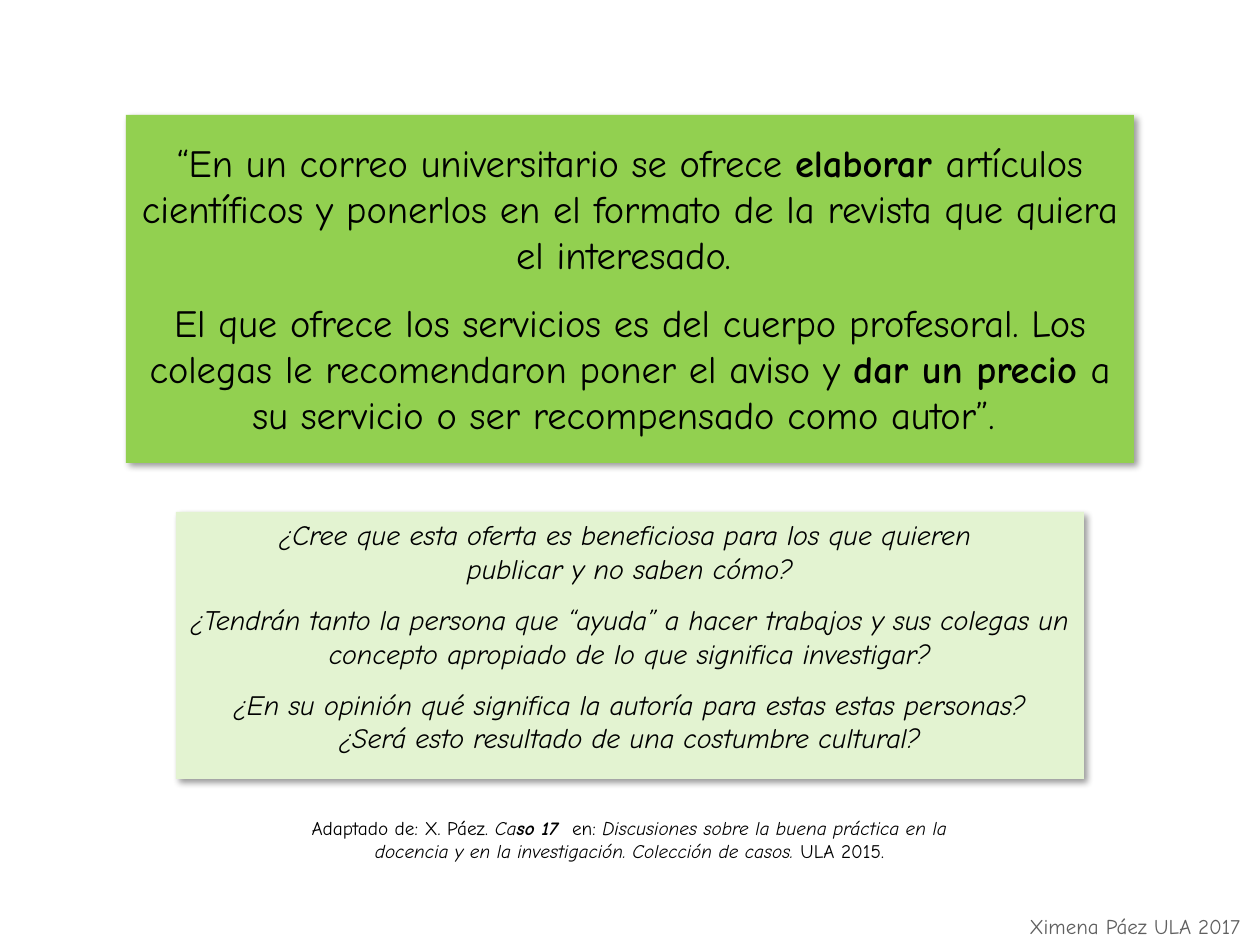
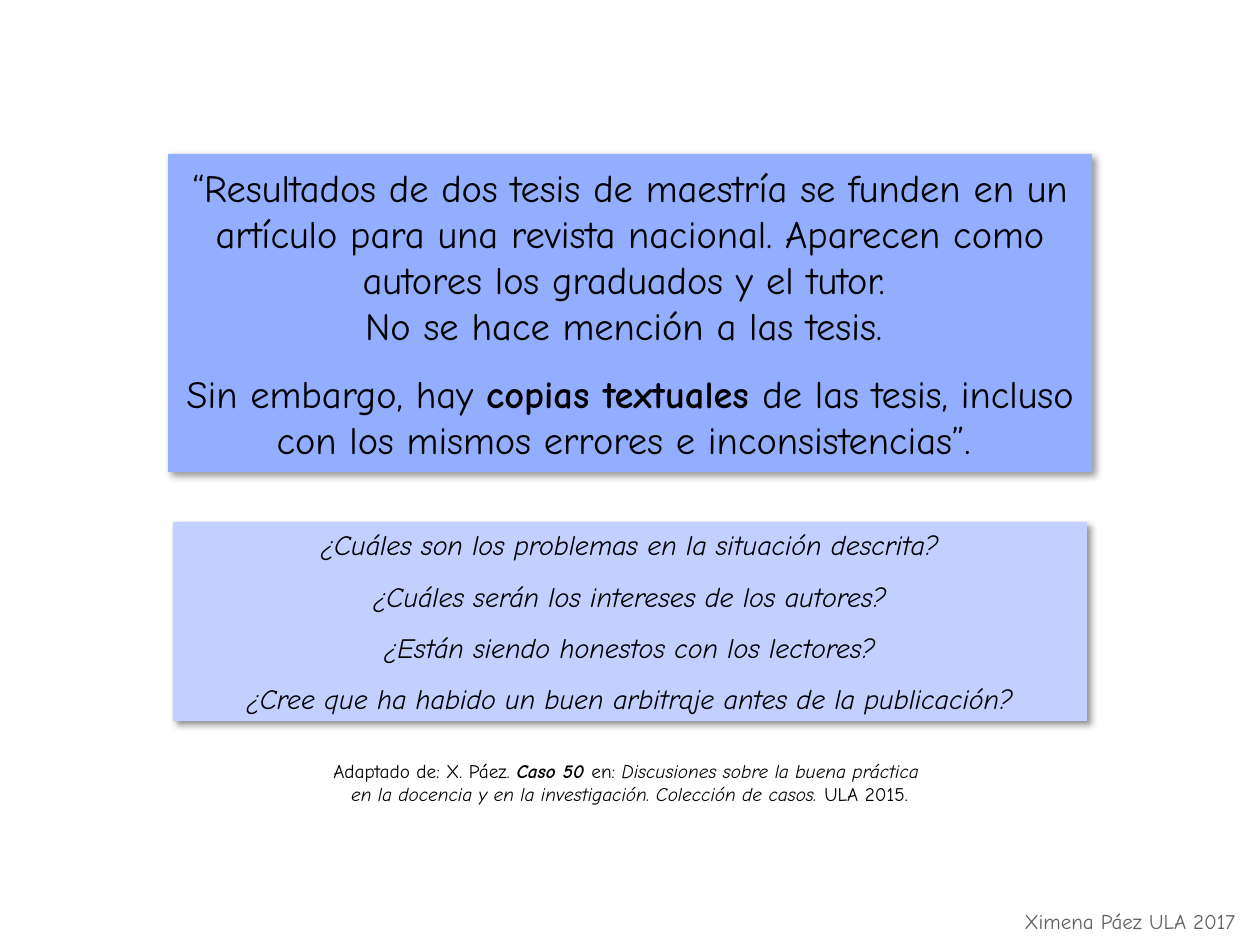
from lxml.etree import SubElement as Sub
from pptx import Presentation
from pptx.dml.color import RGBColor as RGB
from pptx.enum.shapes import MSO_SHAPE as Shape
from pptx.enum.text import MSO_ANCHOR as Anchor, MSO_AUTO_SIZE as Fit, PP_ALIGN as Align
from pptx.oxml.ns import qn
from pptx.util import Emu, Pt

SCALE = 914400 / 126
FONT = "Comic Neue"
INK = {
    "text": "000000", "foot": "5F5F5F",
    "green": "92D050", "pale green": "E3F3D1",
    "blue": "93ADFF", "pale blue": "C1D0FF",
}
CASE, ASK, NOTE, FOOT = 22, 16, 11, 12  # text sizes in points


def px(*nums):
    return [Emu(round(n * SCALE)) for n in nums]


def tint(name):
    return RGB.from_string(INK[name])


class Deck:
    def __init__(self):
        self.prs = Presentation()
        self.prs.slide_width, self.prs.slide_height = px(1260, 945)
        self.slide = None

    def page(self):
        self.slide = self.prs.slides.add_slide(self.prs.slide_layouts[6])

    def put(self, shape, paras, size, color="text", italic=None):
        """Fill a shape with (gap in points, runs); a run is text or (text, marks)."""
        frame = shape.text_frame
        frame.word_wrap = True
        frame.auto_size = Fit.NONE
        frame.vertical_anchor = Anchor.TOP
        for i, (gap, runs) in enumerate(paras):
            para = frame.add_paragraph() if i else frame.paragraphs[0]
            para.alignment = Align.CENTER
            para.space_before = Pt(gap if i else 0)
            font = para.font
            font.name, font.size, font.italic = FONT, Pt(size), italic
            font.color.rgb = tint(color)
            for item in runs:
                text, marks = (item, "") if isinstance(item, str) else item
                run = para.add_run()
                run.text = text
                if "b" in marks:
                    run.font.bold = True
                if "i" in marks:
                    run.font.italic = True
        return frame

    def shade(self, shape):
        shape.shadow.inherit = False
        glow = shape._element.spPr.find(qn("a:effectLst"))
        drop = Sub(glow, qn("a:outerShdw"), blurRad=str(Pt(4)), dist=str(Pt(3)),
                   dir="2700000", algn="tl", rotWithShape="0")
        ink = Sub(drop, qn("a:srgbClr"), val=INK["text"])
        Sub(ink, qn("a:alpha"), val="40000")

    def panel(self, box, fill, paras, size, italic=None, top=6):
        shape = self.slide.shapes.add_shape(Shape.RECTANGLE, *px(*box))
        shape.fill.solid()
        shape.fill.fore_color.rgb = tint(fill)
        shape.line.fill.background()
        self.shade(shape)
        frame = self.put(shape, paras, size, italic=italic)
        frame.margin_top, = px(top)

    def label(self, box, paras, size, color="text"):
        shape = self.slide.shapes.add_textbox(*px(*box))
        return self.put(shape, paras, size, color)

    def foot(self, left, top):
        frame = self.label((left, top, 252, 38), [(0, ["Ximena Páez ULA 2017"])], FOOT, "foot")
        frame.word_wrap = False
        frame.auto_size = Fit.SHAPE_TO_FIT_TEXT


def offer(deck):
    deck.page()
    deck.foot(1009, 907)
    deck.panel((126, 115, 1008, 348), "green", [
        (0, ["“En un correo universitario se ofrece ", ("elaborar ", "b"),
             "artículos científicos y ponerlos en el formato de la revista "
             "que quiera el interesado. "]),
        (12, ["El que ofrece los servicios es del cuerpo profesoral. Los colegas "
              "le recomendaron poner el aviso y ", ("dar un precio ", "b"),
              "a su servicio o ser recompensado como autor”. "]),
    ], CASE, top=24)
    deck.label((297, 810, 665, 59), [
        (0, ["Adaptado de: X. Páez. ", ("Ca", "i"), ("so 17  ", "bi"), "en: ",
             ("Discusiones sobre la buena práctica en la docencia y en la "
              "investigación. Colección de casos. ", "i"), "ULA 2015."]),
    ], NOTE)
    deck.panel((176, 512, 908, 267), "pale green", [
        (0, ["¿Cree que esta oferta es beneficiosa para los que quieren "]),
        (0, ["publicar y no saben cómo?"]),
        (10, ["¿Tendrán tanto la persona que “ayuda” a hacer trabajos y sus colegas "
              "un concepto apropiado de lo que significa investigar?"]),
        (10, ["¿En su opinión qué significa la autoría para estas estas personas?"]),
        (0, ["¿Será esto resultado de una costumbre cultural?"]),
    ], ASK, italic=True)


def theses(deck):
    deck.page()
    deck.panel((168, 154, 924, 318), "blue", [
        (0, ["“Resultados de dos tesis de maestría se funden en un artículo para una "
             "revista nacional. Aparecen como autores los graduados y el tutor. "]),
        (0, ["No se hace mención a las tesis. "]),
        (12, ["Sin embargo, hay ", ("copias textuales ", "b"),
              "de las tesis, incluso con los mismos errores e inconsistencias”. "]),
    ], CASE, top=10)
    deck.foot(1004, 902)
    deck.label((292, 753, 675, 59), [
        (0, ["Adaptado de: X. Páez. ", ("Caso 50 ", "bi"), "en: ",
             ("Discusiones sobre la buena práctica ", "i")]),
        (0, [("en la docencia y en la investigación. Colección de casos. ", "i"),
             "ULA 2015."]),
    ], NOTE)
    asks = [
        "¿Cuáles son los problemas en la situación descrita?",
        "¿Cuáles serán los intereses de los autores?",
        "¿Están siendo honestos con los lectores?",
        "¿Cree que ha habido un buen arbitraje antes de la publicación?",
    ]
    deck.panel((173, 522, 914, 199), "pale blue", [(10, [ask]) for ask in asks],
               ASK, italic=True)


def main():
    deck = Deck()
    offer(deck)
    theses(deck)
    deck.prs.save("out.pptx")


if __name__ == "__main__":
    main()
